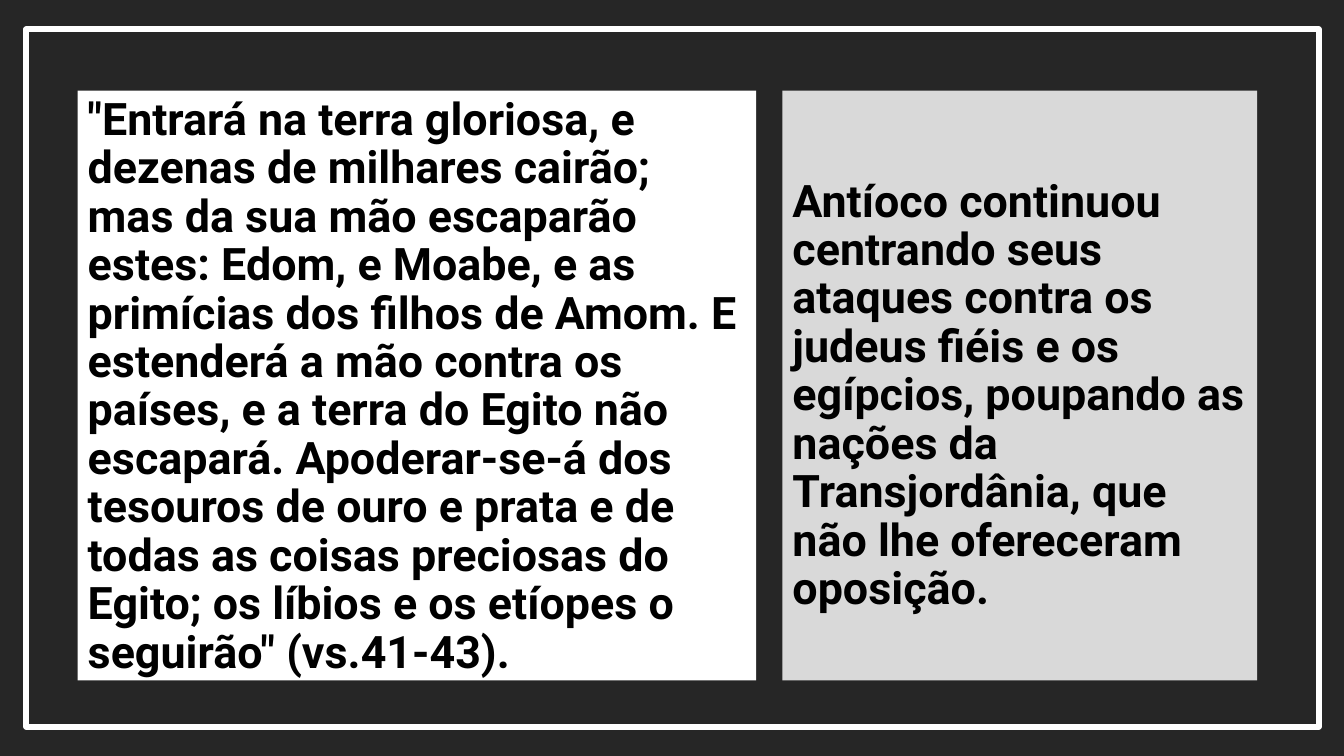
from dataclasses import dataclass

from lxml import etree
from pptx import Presentation
from pptx import util as u
from pptx.dml import color
from pptx.enum import shapes, text
from pptx.oxml import ns

COLORS = {"dark": "262626", "white": "FFFFFF", "gray": "D9D9D9", "black": "000000"}
PANEL_TOP, PANEL_HEIGHT = 0.9, 5.85


@dataclass
class Panel:
    placeholder_index: int
    left: float
    width: float
    top_margin: float
    fill: str
    wording: str


PANELS = [
    Panel(1, 0.77, 6.73, 0.06, "white",
          '"Entrará na terra gloriosa, e dezenas de milhares cairão; mas da sua mão '
          "escaparão estes: Edom, e Moabe, e as primícias dos filhos de Amom. E "
          "estenderá a mão contra os países, e a terra do Egito não escapará. "
          "Apoderar-se-á dos tesouros de ouro e prata e de todas as coisas preciosas "
          'do Egito; os líbios e os etíopes o seguirão" (vs.41-43).'),
    Panel(2, 7.76, 4.71, 0.87, "gray",
          "Antíoco continuou centrando seus ataques contra os judeus fiéis e os "
          "egípcios, poupando as nações da Transjordânia, que não lhe ofereceram "
          "oposição."),
]


def rgb(name: str) -> color.RGBColor:
    return color.RGBColor.from_string(COLORS[name])


def remove_bullet(paragraph) -> None:
    properties = paragraph._p.get_or_add_pPr()
    properties.set("marL", "0")
    properties.set("indent", "0")
    etree.SubElement(properties, ns.qn("a:buNone"))


def draw_panel(slide, panel: Panel) -> None:
    shape = slide.placeholders[panel.placeholder_index]
    shape.left, shape.top = u.Inches(panel.left), u.Inches(PANEL_TOP)
    shape.width, shape.height = u.Inches(panel.width), u.Inches(PANEL_HEIGHT)
    shape.fill.solid()
    shape.fill.fore_color.rgb = rgb(panel.fill)

    frame = shape.text_frame
    frame.word_wrap = True
    frame.auto_size = text.MSO_AUTO_SIZE.NONE
    frame.vertical_anchor = text.MSO_ANCHOR.TOP
    frame.margin_left = frame.margin_right = u.Inches(0.1)
    frame.margin_top, frame.margin_bottom = u.Inches(panel.top_margin), u.Inches(0)

    paragraph = frame.paragraphs[0]
    paragraph.text = panel.wording
    paragraph.alignment = text.PP_ALIGN.LEFT
    paragraph.line_spacing = 0.9
    paragraph.space_before = u.Pt(0)
    remove_bullet(paragraph)
    font = paragraph.font
    font.name, font.size, font.bold = "Roboto", u.Pt(32), True
    font.color.rgb = rgb("black")


def draw_border(slide) -> None:
    border = slide.shapes.add_shape(
        shapes.MSO_SHAPE.RECTANGLE,
        u.Inches(0.26), u.Inches(0.29), u.Inches(12.82), u.Inches(6.92))
    border.shadow.inherit = False
    border.fill.background()
    border.line.color.rgb = rgb("white")
    border.line.width = u.Pt(4)


def main() -> None:
    presentation = Presentation()
    presentation.slide_width = u.Inches(13.33)
    presentation.slide_height = u.Inches(7.5)
    two_content_layout = presentation.slide_layouts[3]
    slide = presentation.slides.add_slide(two_content_layout)
    slide.background.fill.solid()
    slide.background.fill.fore_color.rgb = rgb("dark")

    title = slide.shapes.title.element
    title.getparent().remove(title)
    draw_border(slide)
    for panel in PANELS:
        draw_panel(slide, panel)
    presentation.save("out.pptx")


if __name__ == "__main__":
    main()
